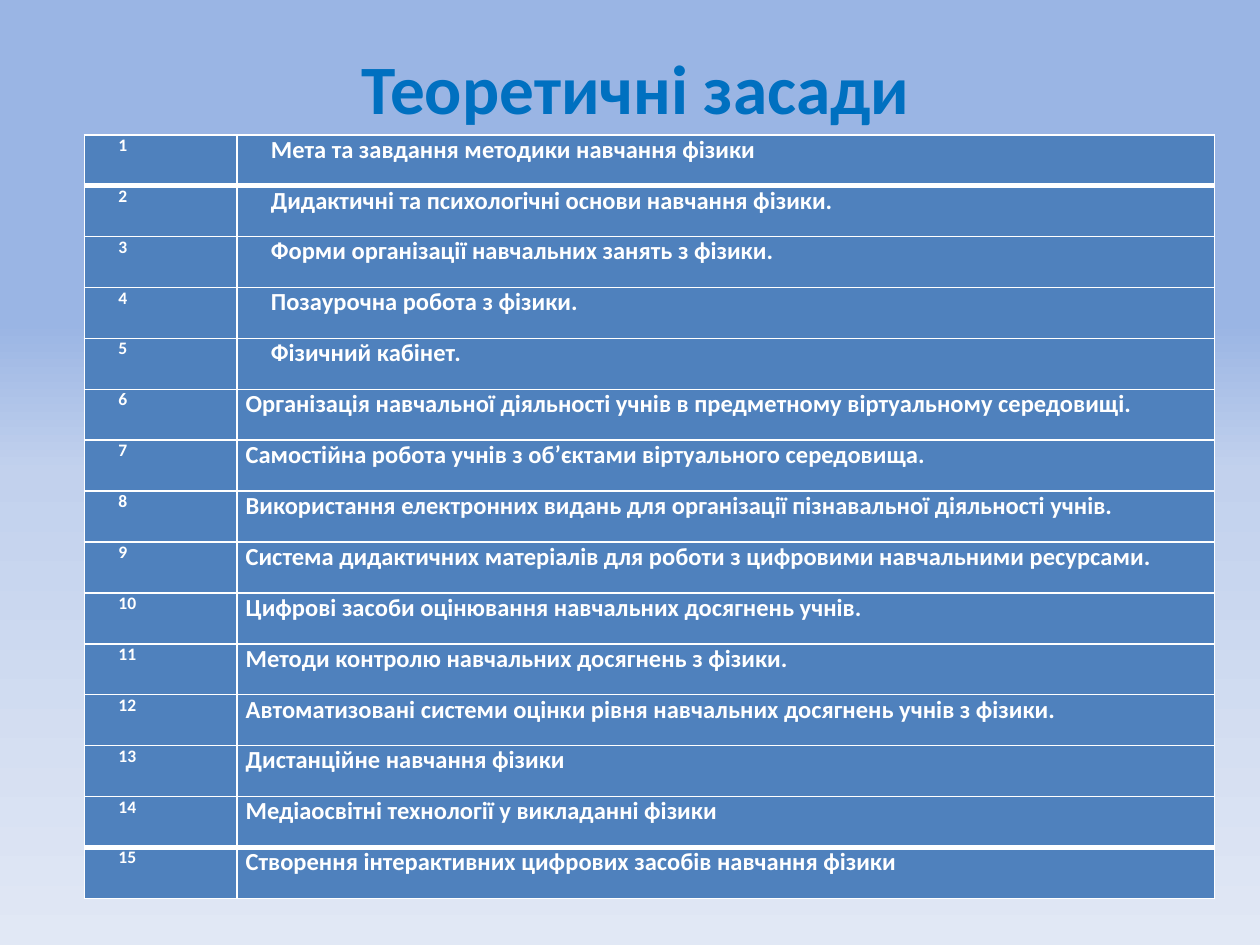
from copy import deepcopy

from lxml.etree import SubElement
from pptx import Presentation
from pptx.dml.color import RGBColor
from pptx.enum.text import MSO_ANCHOR, PP_ALIGN
from pptx.oxml.ns import qn
from pptx.util import Inches, Pt

TITLE = "Теоретичні засади"
INDENTED_TOPICS = [
    "Мета та завдання методики навчання фізики",
    "Дидактичні та психологічні основи навчання фізики.",
    "Форми організації навчальних занять з фізики.",
    "Позаурочна робота з фізики.",
    "Фізичний кабінет.",
]
PLAIN_TOPICS = [
    "Організація навчальної діяльності учнів в предметному віртуальному середовищі.",
    "Самостійна робота учнів з об’єктами віртуального середовища.",
    "Використання електронних видань для організації пізнавальної діяльності учнів.",
    "Система дидактичних матеріалів для роботи з цифровими навчальними ресурсами.",
    "Цифрові засоби оцінювання навчальних досягнень учнів.",
    "Методи контролю навчальних досягнень з фізики.",
    "Автоматизовані системи оцінки рівня навчальних досягнень учнів з фізики.",
    "Дистанційне навчання фізики",
    "Медіаосвітні технології у викладанні фізики",
    "Створення інтерактивних цифрових засобів навчання фізики",
]
TOPICS = INDENTED_TOPICS + PLAIN_TOPICS

THEME = {
    "font": "Calibri",
    "title_color": "0070C0",
    "title_size": 39.6,
    "text_color": "FFFFFF",
    "number_size": 10,
    "topic_size": 14,
    "cell_fill": "4F81BD",
    "border_color": "FFFFFF",
    "thin": 1,
    "thick": 3,
    "background": [(0.34, "9AB5E4"), (0.5, "C2D1ED"), (1, "E1E8F5")],
}
TABLE_LEFT, TABLE_TOP, TABLE_HEIGHT = 0.67, 1.07, 6.06
COLUMN_WIDTHS = [1.21, 7.76]
FIRST_LINE = 0.2


def write_text(frame, text, *, size, color, align, indent=0):
    frame.word_wrap = True
    para = frame.paragraphs[0]
    para.alignment = align
    if indent:
        properties = para._p.get_or_add_pPr()
        properties.set("marL", "0")
        properties.set("indent", str(Inches(indent)))
    span = para.add_run()
    span.text = text
    span.font.name = THEME["font"]
    span.font.size = Pt(size)
    span.font.bold = True
    span.font.color.rgb = RGBColor.from_string(color)


def paint_background(page):
    fill = page.background.fill
    fill.gradient()
    fill.gradient_angle = 270
    stop_list = page.element.find(".//" + qn("a:gsLst"))
    stop_list.append(deepcopy(stop_list[0]))
    for stop, (position, color) in zip(fill.gradient_stops, THEME["background"]):
        stop.position = position
        stop.color.rgb = RGBColor.from_string(color)


def add_title(page):
    box = page.shapes.add_textbox(Inches(0.2), Inches(0.29), Inches(9.69), Inches(0.79))
    box.text_frame.vertical_anchor = MSO_ANCHOR.MIDDLE
    write_text(box.text_frame, TITLE, size=THEME["title_size"],
               color=THEME["title_color"], align=PP_ALIGN.CENTER)


def style_cell(cell, top, bottom):
    cell.margin_left = cell.margin_right = Inches(0.07)
    cell.margin_top = cell.margin_bottom = 0
    properties = cell._tc.get_or_add_tcPr()
    widths = {"lnL": THEME["thin"], "lnR": THEME["thin"], "lnT": top, "lnB": bottom}
    for side, width in widths.items():
        line = SubElement(properties, qn(f"a:{side}"), w=str(Pt(width)))
        paint = SubElement(line, qn("a:solidFill"))
        SubElement(paint, qn("a:srgbClr"), val=THEME["border_color"])
    cell.fill.solid()
    cell.fill.fore_color.rgb = RGBColor.from_string(THEME["cell_fill"])


def add_topic_table(page):
    count = len(TOPICS)
    table = page.shapes.add_table(
        count, len(COLUMN_WIDTHS), Inches(TABLE_LEFT), Inches(TABLE_TOP),
        Inches(sum(COLUMN_WIDTHS)), Inches(TABLE_HEIGHT)).table
    table.first_row = table.horz_banding = False
    for column, width in zip(table.columns, COLUMN_WIDTHS):
        column.width = Inches(width)
    thick_edges = {1, count - 1}
    for index, topic in enumerate(TOPICS):
        table.rows[index].height = Inches(TABLE_HEIGHT / count)
        top, bottom = (THEME["thick"] if edge in thick_edges else THEME["thin"]
                       for edge in (index, index + 1))
        topic_indent = FIRST_LINE if index < len(INDENTED_TOPICS) else 0
        entries = [
            (str(index + 1), THEME["number_size"], FIRST_LINE),
            (topic, THEME["topic_size"], topic_indent),
        ]
        for column, (text, size, indent) in enumerate(entries):
            cell = table.cell(index, column)
            style_cell(cell, top, bottom)
            write_text(cell.text_frame, text, size=size, color=THEME["text_color"],
                       align=PP_ALIGN.JUSTIFY, indent=indent)


def main():
    deck = Presentation()
    deck.slide_width, deck.slide_height = Inches(10), Inches(7.5)
    page = deck.slides.add_slide(deck.slide_layouts[6])
    paint_background(page)
    add_title(page)
    add_topic_table(page)
    deck.save("out.pptx")


if __name__ == "__main__":
    main()
